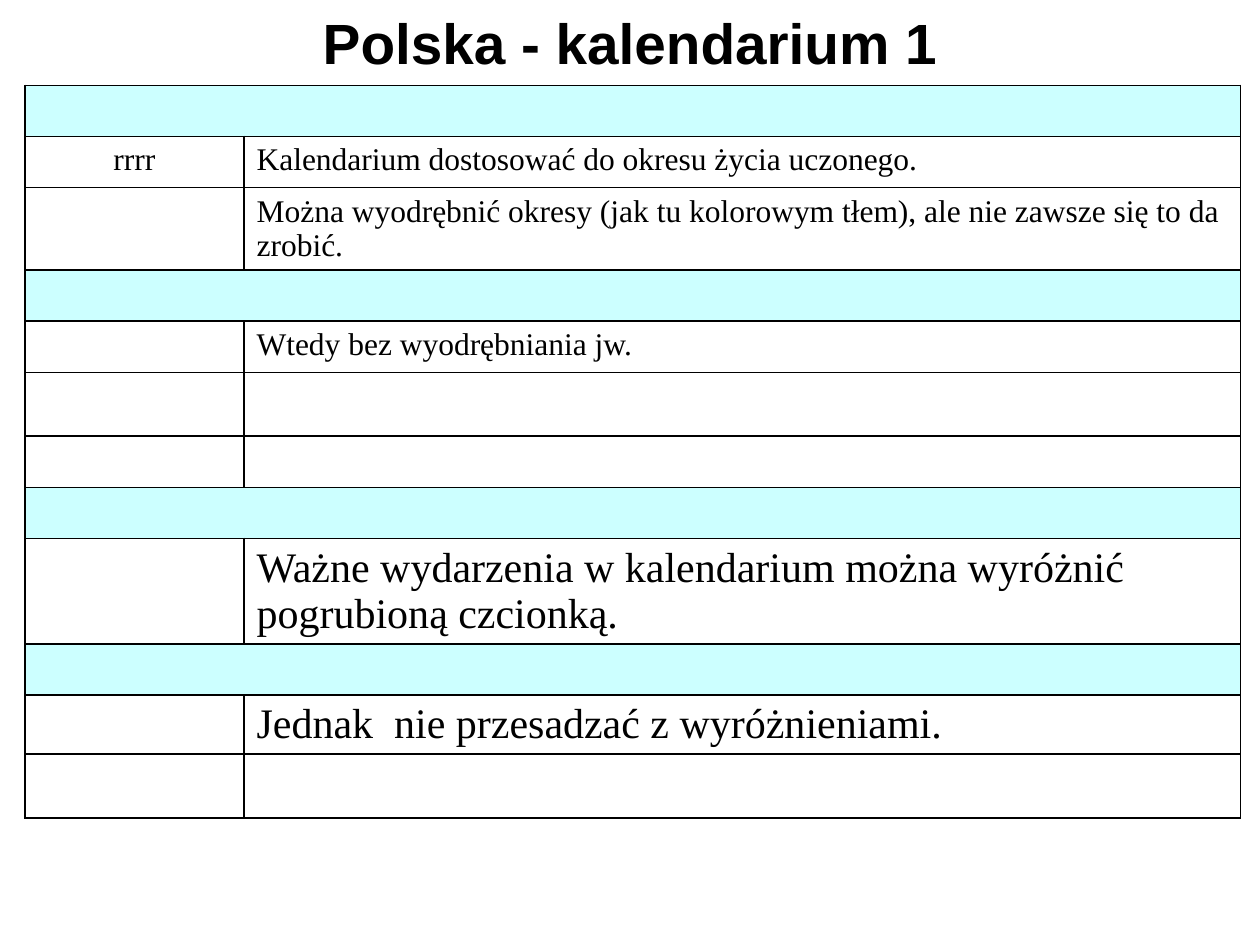
from dataclasses import dataclass

from lxml import etree
from pptx import Presentation
from pptx import util as u
from pptx.dml.color import RGBColor
from pptx.enum import text
from pptx.oxml import ns


@dataclass
class Theme:
    ink: str = "000000"
    paper: str = "FFFFFF"
    band: str = "CCFFFF"
    head: str = "Arial"
    body: str = "Times New Roman"
    title: float = 32.4
    small: float = 18
    large: float = 24
    line: float = 1


class Deck:
    def __init__(self, pres, theme):
        self.theme = theme
        self.slide = pres.slides.add_slide(pres.slide_layouts[5])

    def label(self, para, words, face, size, bold=False, align=None):
        para.text = words
        para.alignment = align
        font = para.font
        font.name, font.size, font.bold = face, u.Pt(size), bold
        font.color.rgb = RGBColor.from_string(self.theme.ink)

    def title(self, words, left, top, width, height):
        box = self.slide.shapes.title
        box.left, box.top = u.Pt(left), u.Pt(top)
        box.width, box.height = u.Pt(width), u.Pt(height)
        frame = box.text_frame
        frame.auto_size = text.MSO_AUTO_SIZE.NONE
        frame.vertical_anchor = text.MSO_ANCHOR.MIDDLE
        self.label(frame.paragraphs[0], words, self.theme.head,
                   self.theme.title, True, text.PP_ALIGN.CENTER)

    def border(self, cell):
        # Border lines come before the fill in the cell properties
        props = cell._tc.get_or_add_tcPr()
        for i, side in enumerate(("lnL", "lnR", "lnT", "lnB")):
            line = etree.Element(ns.qn(f"a:{side}"),
                                 w=str(u.Pt(self.theme.line)))
            fill = etree.SubElement(line, ns.qn("a:solidFill"))
            etree.SubElement(fill, ns.qn("a:srgbClr"), val=self.theme.ink)
            props.insert(i, line)

    def cell(self, cell, words, size, fill, align=None):
        cell.fill.solid()
        cell.fill.fore_color.rgb = RGBColor.from_string(fill)
        self.border(cell)
        self.label(cell.text_frame.paragraphs[0], words, self.theme.body,
                   size, align=align)

    def table(self, rows, left, top, widths):
        total = sum(row[3] for row in rows)
        grid = self.slide.shapes.add_table(
            len(rows), len(widths), u.Pt(left), u.Pt(top),
            u.Pt(sum(widths)), u.Pt(total)).table
        grid.first_row = grid.horz_banding = False
        for col, width in zip(grid.columns, widths):
            col.width = u.Pt(width)
        for i, (year, event, size, height, band) in enumerate(rows):
            grid.rows[i].height = u.Pt(height)
            fill = self.theme.band if band else self.theme.paper
            self.cell(grid.cell(i, 0), year, self.theme.small, fill,
                      text.PP_ALIGN.CENTER)
            self.cell(grid.cell(i, 1), event, size, fill)
            if band:
                grid.cell(i, 0).merge(grid.cell(i, 1))


def main():
    pres = Presentation()
    pres.slide_width, pres.slide_height = u.Pt(720), u.Pt(540)
    theme = Theme()
    deck = Deck(pres, theme)

    # Heading
    deck.title("Polska - kalendarium 1", 0, 0, 720, 48.24)

    # Calendar rows: year, event, type size, height, period band
    low, tall = 29.25, 36.5

    def entry(event="", year="", size=theme.small, height=low):
        return year, event, size, height, False

    band = ("", "", theme.small, low, True)
    rows = [
        band,
        entry("Kalendarium dostosować do okresu życia uczonego.", "rrrr"),
        entry("Można wyodrębnić okresy (jak tu kolorowym tłem), "
              "ale nie zawsze się to da zrobić."),
        band,
        entry("Wtedy bez wyodrębniania jw."),
        entry(height=tall),
        entry(),
        band,
        entry("Ważne wydarzenia w kalendarium można wyróżnić "
              "pogrubioną czcionką.", size=theme.large),
        band,
        entry("Jednak  nie przesadzać z wyróżnieniami.", size=theme.large),
        entry(height=tall),
    ]
    deck.table(rows, 14.2, 48.75, (125.25, 569.5))

    pres.save("out.pptx")


if __name__ == "__main__":
    main()
